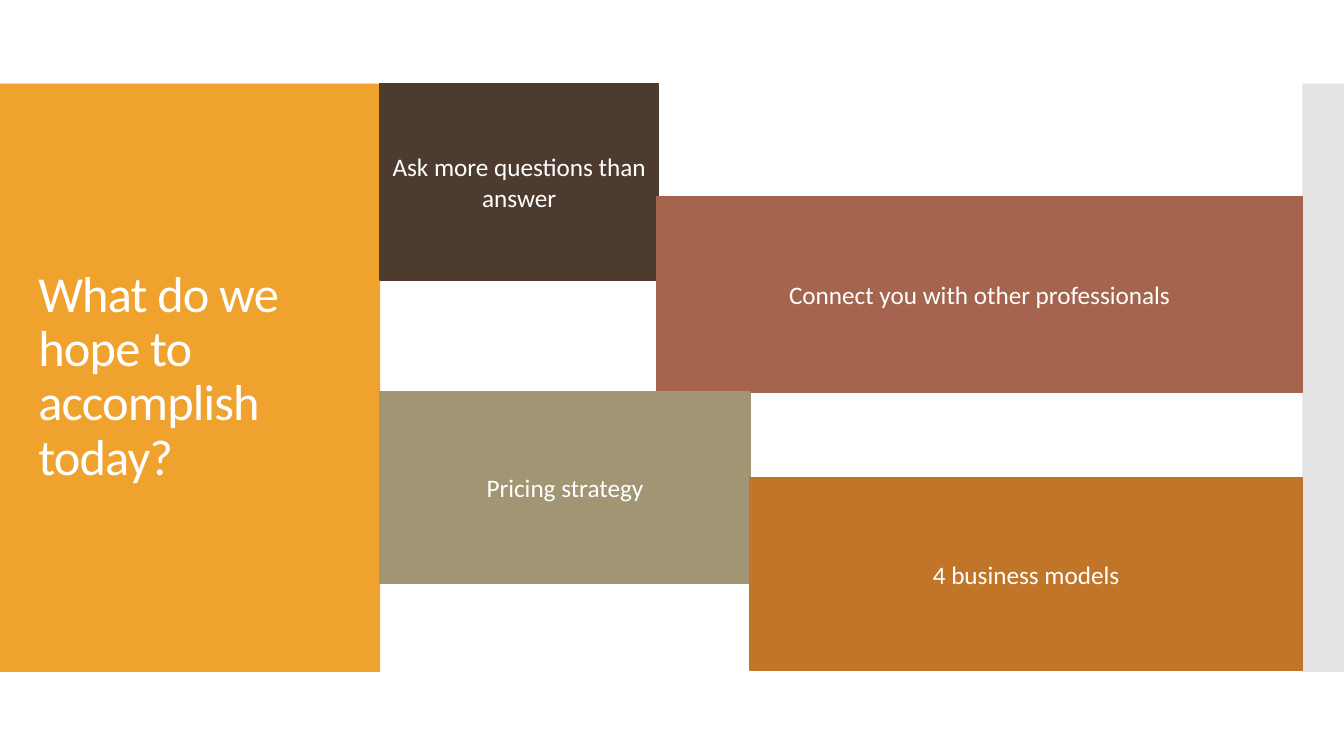
from lxml import etree
from pptx import Presentation
from pptx.dml.color import RGBColor
from pptx.enum.shapes import MSO_SHAPE as Shape
from pptx.enum.text import MSO_ANCHOR as Anchor, MSO_AUTO_SIZE as AutoSize, PP_ALIGN as Align
from pptx.oxml.ns import qn
from pptx.util import Cm, Pt

# Content
TITLE = "What do we hope to accomplish today?"
GOALS = [  # text, colour, line width, (left, top, width, height) in cm
    ("Ask more questions than answer", "4E3B30", 1, (9.58, 2.11, 7.01, 4.95)),
    ("Connect you with other professionals", "A5644E", 0.85, (16.56, 4.95, 16.26, 4.93)),
    ("Pricing strategy", "A19574", 1, (9.58, 9.86, 9.32, 4.85)),
    ("4 business models", "C17529", 0.85, (18.9, 12.04, 13.92, 4.85)),
]

# Layout and formats
SLIDE_WIDTH, SLIDE_HEIGHT = 33.87, 19.05
BAND_TOP, BAND_HEIGHT = 2.11, 14.82
TITLE_PANEL_WIDTH, EDGE_LEFT = 9.58, 32.82
TITLE_BOX = (0.71, 3.12, 8.18, 12.78)
TITLE_FONT = {"name": "Calibri", "size": Pt(36), "bold": False}
GOAL_FONT = {"name": "Calibri", "size": Pt(18)}


def color(hex_code):
    return RGBColor.from_string(hex_code)


def add_rectangle(slide, box, fill):
    shape = slide.shapes.add_shape(Shape.RECTANGLE, *map(Cm, box))
    shape.shadow.inherit = False
    shape.fill.solid()
    shape.fill.fore_color.rgb = color(fill)
    shape.line.fill.background()
    return shape


def write_text(shape, text, font_format, alignment):
    frame = shape.text_frame
    frame.word_wrap = True
    frame.auto_size = AutoSize.NONE
    frame.vertical_anchor = Anchor.MIDDLE
    paragraph = frame.paragraphs[0]
    paragraph.alignment = alignment
    run = paragraph.add_run()
    run.text = text
    for name, value in font_format.items():
        setattr(run.font, name, value)
    run.font.color.rgb = color("FFFFFF")
    return paragraph


def add_panels(slide):
    add_rectangle(slide, (0, BAND_TOP, TITLE_PANEL_WIDTH, BAND_HEIGHT), "F0A22E")
    edge = add_rectangle(
        slide, (EDGE_LEFT, BAND_TOP, SLIDE_WIDTH - EDGE_LEFT, BAND_HEIGHT), "C8C8C8")
    fill_color = edge.element.spPr.find(qn("a:solidFill"))[0]
    etree.SubElement(fill_color, qn("a:alpha"), val="50000")


def add_title(slide):
    title = slide.shapes.title
    title.left, title.top, title.width, title.height = map(Cm, TITLE_BOX)
    paragraph = write_text(title, TITLE, TITLE_FONT, Align.LEFT)
    paragraph.line_spacing = 0.9
    # Tighten the letters and bring the title in front of its panel
    paragraph.runs[0].font.color  # makes sure run properties exist
    title.element.find(".//" + qn("a:rPr")).set("spc", "-60")
    title.element.getparent().append(title.element)


def add_goals(slide):
    for text, fill, line_width, box in GOALS:
        shape = add_rectangle(slide, box, fill)
        shape.line.color.rgb = color(fill)
        shape.line.width = Pt(line_width)
        write_text(shape, text, GOAL_FONT, Align.CENTER)


def main():
    presentation = Presentation()
    presentation.slide_width, presentation.slide_height = Cm(SLIDE_WIDTH), Cm(SLIDE_HEIGHT)
    slide = presentation.slides.add_slide(presentation.slide_layouts[5])
    add_panels(slide)
    add_title(slide)
    add_goals(slide)
    presentation.save("out.pptx")


if __name__ == "__main__":
    main()
